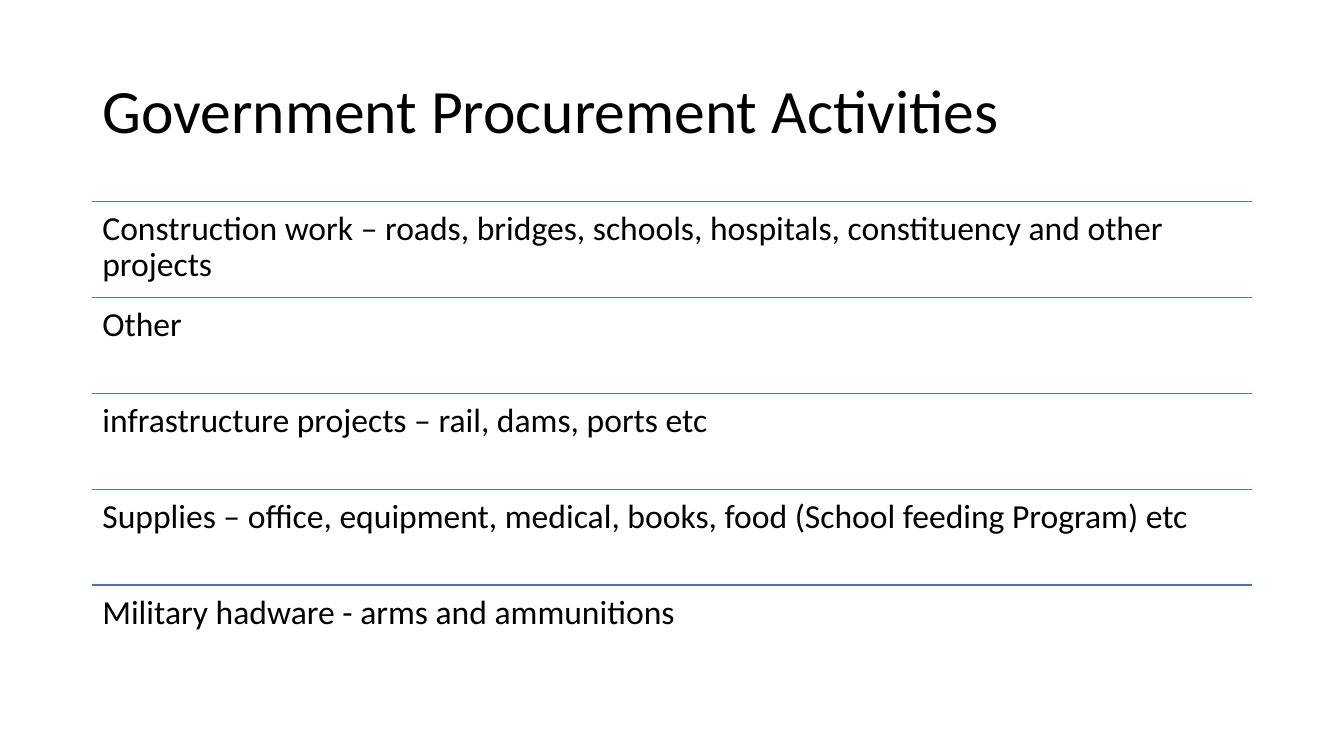
from collections import namedtuple

from lxml import etree
from pptx import Presentation
from pptx.dml.color import RGBColor
from pptx.enum.shapes import MSO_CONNECTOR
from pptx.enum.text import MSO_ANCHOR
from pptx.oxml.ns import qn
from pptx.util import Cm, Pt

STRAIGHT = MSO_CONNECTOR.STRAIGHT
MIDDLE = MSO_ANCHOR.MIDDLE
TOP = MSO_ANCHOR.TOP

BLANK_LAYOUT = 6
BLACK = "000000"
BLUE = "4472C4"

Box = namedtuple("Box", "left top width height")  # centimetres

TITLE = "Government Procurement Activities"
ACTIVITIES = [
    "Construction work – roads, bridges, schools, hospitals, constituency and other projects",
    "Other",
    "infrastructure projects – rail, dams, ports etc",
    "Supplies – office, equipment, medical, books, food (School feeding Program) etc",
    "Military hadware - arms and ammunitions",
]


def color(hex_string):
    return RGBColor.from_string(hex_string)


def add_text(page, box, text, size, anchor, inset):
    shape = page.shapes.add_textbox(*map(Cm, box))
    frame = shape.text_frame
    frame_format = {
        "word_wrap": True,
        "vertical_anchor": anchor,
        "margin_left": Cm(0.25),
        "margin_right": Cm(0.25),
        "margin_top": Cm(inset),
        "margin_bottom": Cm(inset),
    }
    for name, value in frame_format.items():
        setattr(frame, name, value)
    para = frame.paragraphs[0]
    para.line_spacing = 0.9
    span = para.add_run()
    span.text = text
    span_format = {"name": "Calibri", "size": Pt(size)}
    for name, value in span_format.items():
        setattr(span.font, name, value)
    span.font.color.rgb = color(BLACK)


def add_rule(page, left, top, width):
    rule = page.shapes.add_connector(
        STRAIGHT, Cm(left), Cm(top), Cm(left + width), Cm(top))
    rule.line.color.rgb = color(BLUE)
    rule.line.width = Pt(1)
    # An empty effect list removes the theme shadow
    etree.SubElement(rule._element.spPr, qn("a:effectLst"))


def add_title(page, box):
    add_text(page, box, TITLE, 44, MIDDLE, 0.13)


def add_activity_list(page, box):
    row_height = box.height / len(ACTIVITIES)
    for index, activity in enumerate(ACTIVITIES):
        row = box._replace(top=box.top + index * row_height, height=row_height)
        add_rule(page, row.left, row.top, row.width)
        add_text(page, row, activity, 24, TOP, 0.25)


def main():
    deck = Presentation()
    deck.slide_width = Cm(33.87)
    deck.slide_height = Cm(19.05)
    page = deck.slides.add_slide(deck.slide_layouts[BLANK_LAYOUT])

    # Heading
    add_title(page, Box(2.33, 1.01, 29.21, 3.68))
    # Ruled rows of activities
    add_activity_list(page, Box(2.33, 5.08, 29.21, 12.08))

    deck.save("out.pptx")


if __name__ == "__main__":
    main()
